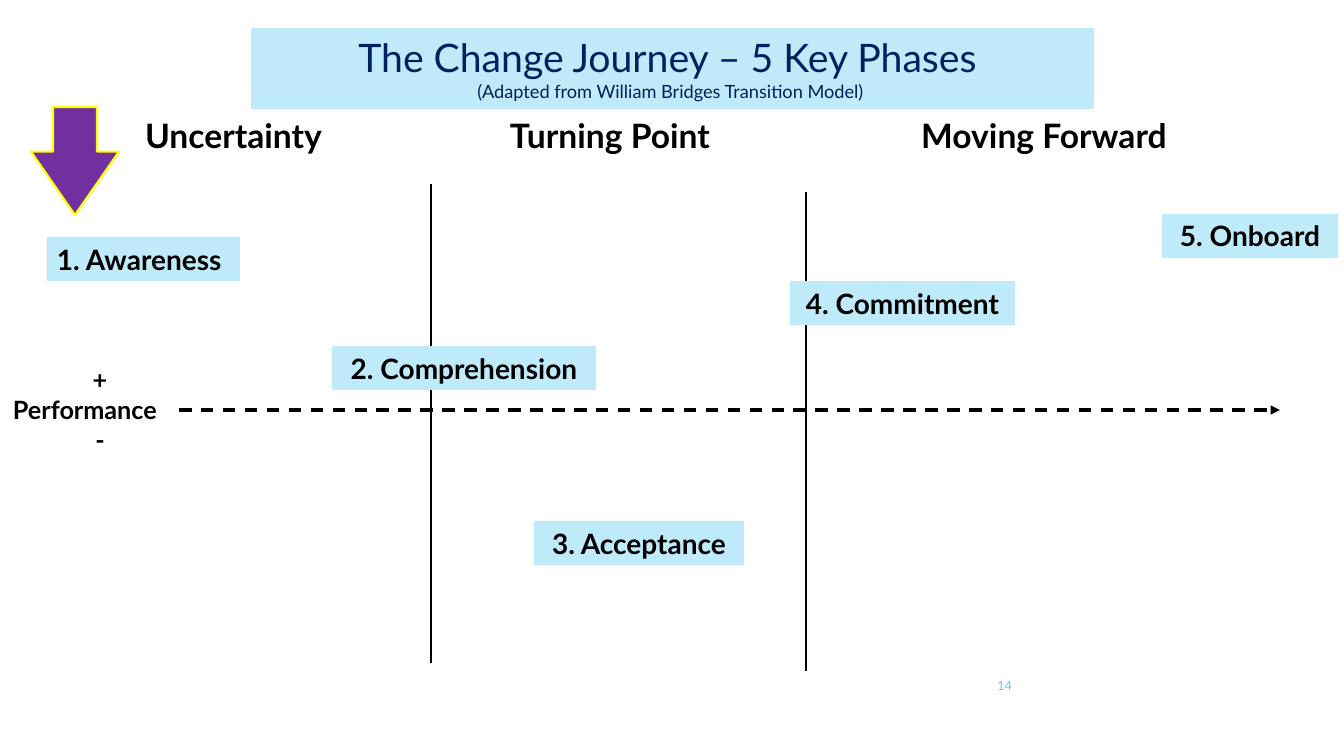
from dataclasses import dataclass

from lxml import etree
from pptx import Presentation
from pptx.dml.color import RGBColor
from pptx.enum.dml import MSO_LINE
from pptx.enum.shapes import MSO_CONNECTOR, MSO_SHAPE
from pptx.enum.text import MSO_ANCHOR, MSO_AUTO_SIZE, PP_ALIGN
from pptx.oxml.ns import qn
from pptx.util import Pt

EMU_PER_INCH = 914400
PX_PER_INCH = 100.8
TITLE_ONLY = 5
LEFT, CENTER, RIGHT = PP_ALIGN.LEFT, PP_ALIGN.CENTER, PP_ALIGN.RIGHT
TOP, MIDDLE = MSO_ANCHOR.TOP, MSO_ANCHOR.MIDDLE
RECTANGLE, DOWN_ARROW = MSO_SHAPE.RECTANGLE, MSO_SHAPE.DOWN_ARROW
STRAIGHT, DASH = MSO_CONNECTOR.STRAIGHT, MSO_LINE.DASH
NO_AUTOFIT = MSO_AUTO_SIZE.NONE


@dataclass(frozen=True)
class Theme:
    """Colours, font and type sizes of the slide."""
    font: str = "Lato"
    ink: str = "000000"
    title: str = "002060"
    panel: str = "BFEAF9"
    number: str = "5FCBEF"
    arrow: str = "7030A0"
    arrow_edge: str = "FFFF00"
    title_size: int = 28
    subtitle_size: int = 13
    heading_size: int = 24
    phase_size: int = 20
    axis_size: int = 18
    number_size: int = 9


THEME = Theme()

HEADINGS = [
    ("Uncertainty", 123, 221, CENTER),
    ("Turning Point", 500, 237, LEFT),
    ("Moving Forward", 902, 284, CENTER),
]
PHASES = [
    ("1. Awareness", 47, 237, 193, LEFT),
    ("2. Comprehension", 332, 346, 264, CENTER),
    ("3. Acceptance", 534, 521, 210, CENTER),
    ("4. Commitment", 790, 281, 225, CENTER),
    ("5. Onboard", 1162, 214, 176, CENTER),
]
DIVIDERS = [(431, 184), (806, 192)]


def px(length):
    """Turn pixels into EMU."""
    return round(length * EMU_PER_INCH / PX_PER_INCH)


def paint(target, colour):
    """Fill a shape with one colour."""
    target.fill.solid()
    target.fill.fore_color.rgb = RGBColor.from_string(colour)


def write(shape, lines, colour, bold=False, anchor=TOP):
    """Write (text, size, alignment) lines into a shape."""
    frame = shape.text_frame
    frame.word_wrap = True
    frame.auto_size = NO_AUTOFIT
    frame.vertical_anchor = anchor
    frame.margin_left = frame.margin_right = px(10)
    frame.margin_top = frame.margin_bottom = px(5)
    for index, (text, size, alignment) in enumerate(lines):
        paragraph = frame.paragraphs[0] if index == 0 else frame.add_paragraph()
        paragraph.text = text
        paragraph.alignment = alignment
        paragraph.font.name = THEME.font
        paragraph.font.size = Pt(size)
        paragraph.font.bold = bold
        paragraph.font.color.rgb = RGBColor.from_string(colour)


def add_text(slide, box, lines, colour=THEME.ink, bold=True, anchor=TOP):
    """Add a text box at the given pixel box."""
    shape = slide.shapes.add_textbox(*map(px, box))
    write(shape, lines, colour, bold, anchor)


def add_line(slide, start, end, width):
    """Add a straight line without a shadow."""
    line = slide.shapes.add_connector(STRAIGHT, *map(px, start + end))
    line.line.color.rgb = RGBColor.from_string(THEME.ink)
    line.line.width = Pt(width)
    etree.SubElement(line._element.spPr, qn("a:effectLst"))
    return line


def add_title(slide, box):
    """Place the title and its source line on a panel."""
    title = slide.shapes.title
    title.left, title.top, title.width, title.height = map(px, box)
    paint(title, THEME.panel)
    write(title, [
        ("The Change Journey – 5 Key Phases ", THEME.title_size, CENTER),
        ("(Adapted from William Bridges Transition Model) ", THEME.subtitle_size, CENTER),
    ], THEME.title)


def add_headings(slide, top, height):
    """Name the three stages across the top."""
    for text, left, width, alignment in HEADINGS:
        add_text(slide, (left, top, width, height),
                 [(text, THEME.heading_size, alignment)])


def add_dividers(slide, height):
    """Separate the stages with vertical lines."""
    for left, top in DIVIDERS:
        add_line(slide, (left, top), (left, top + height), 1)


def add_performance_axis(slide, box):
    """Draw the dashed performance arrow and its label."""
    left, top, width, height = box
    middle = top + height // 2
    axis = add_line(slide, (left + 176, middle), (left + width, middle), 2.25)
    axis.line.dash_style = DASH
    etree.SubElement(axis.line._get_or_add_ln(), qn("a:tailEnd"), type="triangle")
    add_text(slide, (left, top, 194, height), [
        ("+", THEME.axis_size, CENTER),
        ("Performance", THEME.axis_size, LEFT),
        ("-", THEME.axis_size, CENTER),
    ])


def add_phases(slide, height):
    """Place the five phase labels along the journey."""
    for text, left, top, width, alignment in PHASES:
        phase = slide.shapes.add_shape(RECTANGLE, *map(px, (left, top, width, height)))
        phase.shadow.inherit = False
        paint(phase, THEME.panel)
        phase.line.fill.background()
        write(phase, [(text, THEME.phase_size, alignment)], THEME.ink, bold=True)


def add_start_arrow(slide, box):
    """Point down to the first phase."""
    arrow = slide.shapes.add_shape(DOWN_ARROW, *map(px, box))
    arrow.shadow.inherit = False
    arrow.adjustments[0] = 0.5
    arrow.adjustments[1] = 0.72
    paint(arrow, THEME.arrow)
    arrow.line.color.rgb = RGBColor.from_string(THEME.arrow_edge)
    arrow.line.width = Pt(1.5)


def build_journey_slide(presentation):
    """Build the change journey slide."""
    slide = presentation.slides.add_slide(presentation.slide_layouts[TITLE_ONLY])
    add_title(slide, (251, 28, 843, 81))
    add_text(slide, (947, 666, 75, 40), [("14", THEME.number_size, RIGHT)],
             THEME.number, bold=False, anchor=MIDDLE)
    add_headings(slide, 110, 50)
    add_dividers(slide, 479)
    add_performance_axis(slide, (3, 359, 1277, 102))
    add_phases(slide, 44)
    add_start_arrow(slide, (31, 107, 88, 108))


def main():
    """Create and save the presentation."""
    presentation = Presentation()
    presentation.slide_width = px(1344)
    presentation.slide_height = px(756)
    build_journey_slide(presentation)
    presentation.save("out.pptx")


if __name__ == "__main__":
    main()
